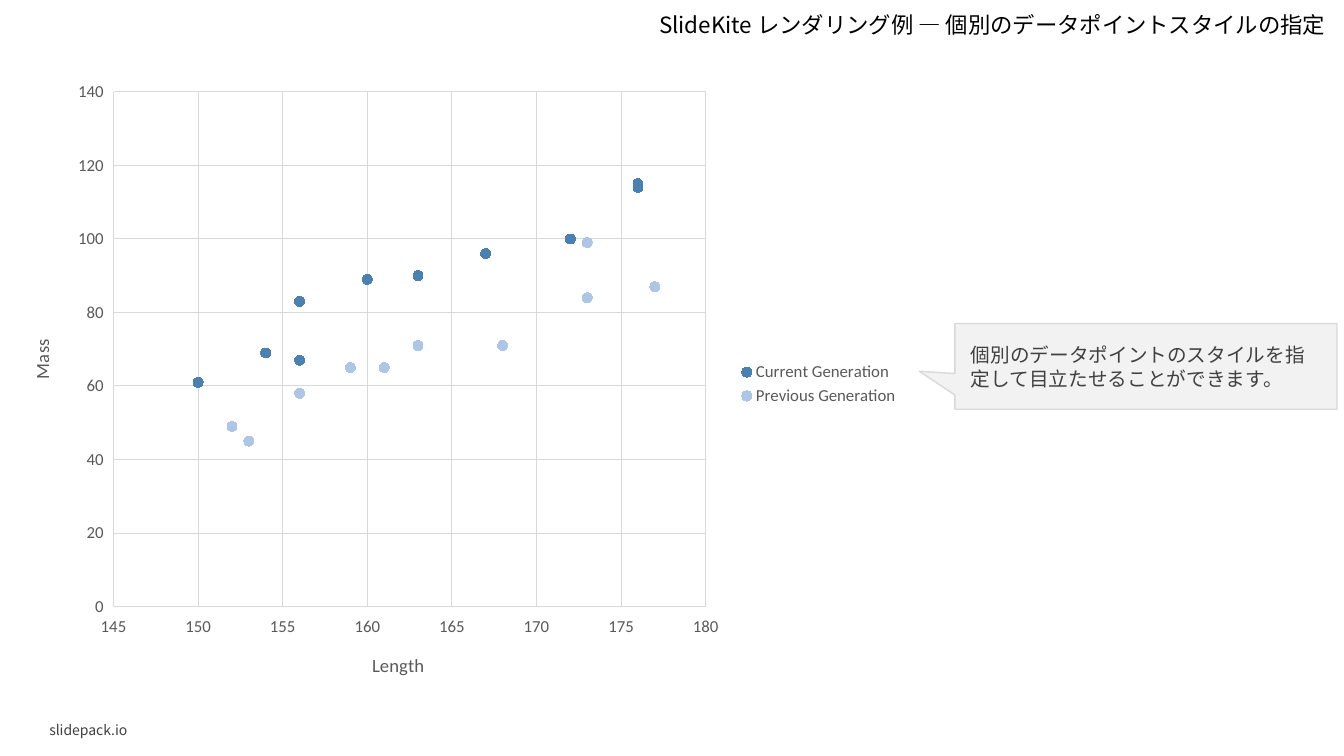
from lxml import etree
from pptx import Presentation
from pptx import util as u
from pptx.chart import data as chart_data
from pptx.dml import color
from pptx.enum import chart as ch, shapes, text
from pptx.oxml import ns

THEME = {
    "font": "Noto Sans CJK JP", "chart_font": "Calibri",
    "black": "000000", "body": "404040", "axis": "595959",
    "grid": "D9D9D9", "panel": "F2F2F2",
    "title_size": 16, "note_size": 14, "axis_title_size": 13.3,
    "chart_size": 12, "footer_size": 10,
}
TITLE = "SlideKite レンダリング例 ― 個別のデータポイントスタイルの指定"
NOTE = "個別のデータポイントのスタイルを指定して目立たせることができます。"
FOOTER = "slidepack.io"
SERIES = [
    ("Current Generation", "4B81B1", [
        (150, 61), (156, 67), (154, 69), (156, 83), (160, 89),
        (163, 90), (172, 100), (167, 96), (176, 115), (176, 114)]),
    ("Previous Generation", "ADC6E5", [
        (153, 45), (156, 58), (152, 49), (159, 65), (163, 71),
        (161, 65), (168, 71), (173, 84), (177, 87), (173, 99)]),
]
AXES = {"Length": (145, 180, 5), "Mass": (0, 140, 20)}
PLOT = {"x": 0.117, "y": 0.037, "w": 0.657, "h": 0.816}


def rgb(name):
    return color.RGBColor.from_string(THEME.get(name, name))


def inches(*lengths):
    return [u.Inches(length) for length in lengths]


def style_font(font, size, shade, face="chart_font"):
    font.size, font.bold, font.name = u.Pt(THEME[size]), False, THEME[face]
    font.color.rgb = rgb(shade)


def write(shape, words, size, shade, align=text.PP_ALIGN.LEFT,
          anchor=text.MSO_ANCHOR.MIDDLE, wrap=True):
    frame = shape.text_frame
    frame.text, frame.word_wrap, frame.vertical_anchor = words, wrap, anchor
    para = frame.paragraphs[0]
    para.alignment = align
    span = para.runs[0]
    style_font(span.font, size, shade, "font")
    east_asian = etree.SubElement(span.font._element, ns.qn("a:ea"))
    east_asian.set("typeface", THEME["font"])
    return frame


def style_axis(axis, name):
    axis.minimum_scale, axis.maximum_scale, axis.major_unit = AXES[name]
    axis.has_major_gridlines = True
    grid = axis.major_gridlines.format.line
    grid.color.rgb, grid.width = rgb("grid"), u.Pt(0.75)
    axis.format.line.fill.background()
    style_font(axis.tick_labels.font, "chart_size", "axis")
    axis.tick_labels.number_format = "General"
    axis.tick_labels.number_format_is_linked = False
    frame = axis.axis_title.text_frame
    frame.text = name
    style_font(frame.paragraphs[0].runs[0].font, "axis_title_size", "axis")
    return frame


def place_plot(chart):
    area = chart._chartSpace.chart.plotArea
    for old in area.findall(ns.qn("c:layout")):
        area.remove(old)
    layout = etree.Element(ns.qn("c:layout"))
    area.insert(0, layout)
    manual = etree.SubElement(layout, ns.qn("c:manualLayout"))
    settings = [("layoutTarget", "inner"), ("xMode", "edge"), ("yMode", "edge")]
    for tag, value in settings + list(PLOT.items()):
        etree.SubElement(manual, ns.qn("c:" + tag)).set("val", str(value))


def add_scatter(page):
    data = chart_data.XyChartData()
    for name, _, points in SERIES:
        series = data.add_series(name)
        for x, y in points:
            series.add_data_point(x, y)
    chart = page.shapes.add_chart(
        ch.XL_CHART_TYPE.XY_SCATTER, *inches(0.08, 0.68, 8.94, 6.26), data).chart
    chart.has_title = False
    style_font(chart.font, "chart_size", "axis")
    chart.has_legend = True
    chart.legend.position = ch.XL_LEGEND_POSITION.RIGHT
    chart.legend.include_in_layout = False
    style_font(chart.legend.font, "chart_size", "axis")
    chart.plots[0].vary_by_categories = False
    for series, (_, shade, _) in zip(chart.plots[0].series, SERIES):
        series.smooth = False
        series.format.line.fill.background()
        marker = series.marker
        marker.style, marker.size = ch.XL_MARKER_STYLE.CIRCLE, 7
        marker.format.fill.solid()
        marker.format.fill.fore_color.rgb = rgb(shade)
        marker.format.line.color.rgb = rgb(shade)
    style_axis(chart.category_axis, "Length")
    mass_title = style_axis(chart.value_axis, "Mass")
    mass_title._txBody.bodyPr.set("rot", "-5400000")
    place_plot(chart)


def add_callout(page):
    box = page.shapes.add_shape(
        shapes.MSO_SHAPE.RECTANGULAR_CALLOUT, *inches(9.47, 3.21, 3.79, 0.85))
    box.shadow.inherit = False
    box.adjustments[0], box.adjustments[1] = -0.593, 0.057
    box.fill.solid()
    box.fill.fore_color.rgb = rgb("panel")
    box.line.color.rgb, box.line.width = rgb("grid"), u.Pt(1)
    frame = write(box, NOTE, "note_size", "body")
    frame.margin_left = frame.margin_right = u.Inches(0.16)
    frame.margin_top = frame.margin_bottom = u.Inches(0.16)


def main():
    deck = Presentation()
    deck.slide_width, deck.slide_height = inches(13.33, 7.5)
    page = deck.slides.add_slide(deck.slide_layouts[6])
    footer = page.shapes.add_textbox(*inches(0.39, 7.12, 2.91, 0.25))
    write(footer, FOOTER, "footer_size", "body")
    add_scatter(page)
    title = page.shapes.add_textbox(*inches(5.92, 0.06, 7.33, 0.37))
    frame = write(title, TITLE, "title_size", "black", text.PP_ALIGN.RIGHT,
                  text.MSO_ANCHOR.TOP, wrap=False)
    frame.auto_size = text.MSO_AUTO_SIZE.SHAPE_TO_FIT_TEXT
    add_callout(page)
    deck.save("out.pptx")


if __name__ == "__main__":
    main()
